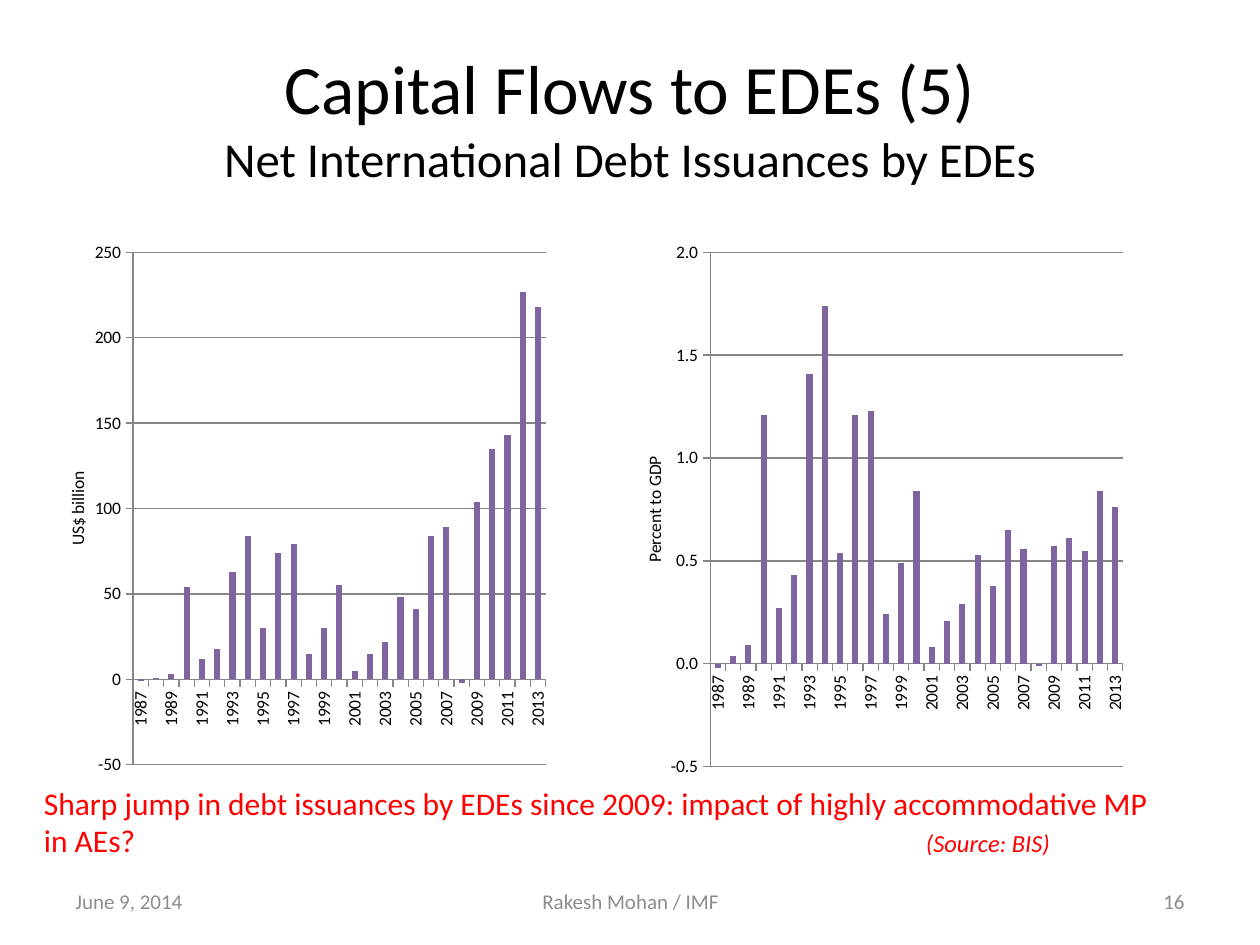
from lxml import etree
from pptx import Presentation
from pptx import util as u
from pptx.chart.data import CategoryChartData
from pptx.dml.color import RGBColor
from pptx.enum import chart as ch
from pptx.enum import text
from pptx.oxml import ns

FONT = "Calibri"
COLORS = {"ink": "000000", "footer": "8C8C8C", "note": "FF0000",
          "bar": "8064A2", "grid": "868686"}
YEARS = [str(year) for year in range(1987, 2014)]
BILLIONS = [-1, 1, 3, 54, 12, 18, 63, 84, 30, 74, 79, 15, 30, 55, 5, 15, 22, 48,
            41, 84, 89, -2, 104, 135, 143, 227, 218]
GDP_SHARES = [-0.02, 0.04, 0.09, 1.21, 0.27, 0.43, 1.41, 1.74, 0.54, 1.21, 1.23,
              0.24, 0.49, 0.84, 0.08, 0.21, 0.29, 0.53, 0.38, 0.65, 0.56, -0.01,
              0.57, 0.61, 0.55, 0.84, 0.76]


def color(name):
    return RGBColor.from_string(COLORS[name])


def style_font(font, size, name="ink"):
    font.name = FONT
    font.size = u.Pt(size)
    font.bold = False
    font.color.rgb = color(name)


def add_span(para, words, size, name="ink", italic=False):
    span = para.add_run()
    span.text = words
    style_font(span.font, size, name)
    span.font.italic = italic


def add_box(page, left, top, width, height, align=text.PP_ALIGN.LEFT,
            anchor=text.MSO_ANCHOR.MIDDLE):
    box = page.shapes.add_textbox(u.Inches(left), u.Inches(top),
                                  u.Inches(width), u.Inches(height))
    frame = box.text_frame
    frame.word_wrap = True
    frame.vertical_anchor = anchor
    para = frame.paragraphs[0]
    para.alignment = align
    return para


def add_tab_stop(para, position):
    props = para._p.get_or_add_pPr()
    stops = etree.SubElement(props, ns.qn("a:tabLst"))
    etree.SubElement(stops, ns.qn("a:tab"), pos=str(u.Inches(position)), algn="l")


def set_plot_area(chart, **fractions):
    area = chart._chartSpace.chart.plotArea
    for old in area.findall(ns.qn("c:layout")):
        area.remove(old)
    layout = etree.Element(ns.qn("c:layout"))
    area.insert(0, layout)
    manual = etree.SubElement(layout, ns.qn("c:manualLayout"))
    settings = {"layoutTarget": "inner", "xMode": "edge", "yMode": "edge", **fractions}
    for tag, value in settings.items():
        etree.SubElement(manual, ns.qn("c:" + tag), val=str(value))


def style_category_axis(axis):
    axis.has_major_gridlines = False
    axis.major_tick_mark = ch.XL_TICK_MARK.OUTSIDE
    axis.tick_label_position = ch.XL_TICK_LABEL_POSITION.NEXT_TO_AXIS
    axis.format.line.color.rgb = color("grid")
    style_font(axis.tick_labels.font, 10)
    axis._element.find(ns.qn("c:txPr")).find(ns.qn("a:bodyPr")).set("rot", "-5400000")
    skip = etree.Element(ns.qn("c:tickLblSkip"), val="2")
    axis._element.find(ns.qn("c:noMultiLvlLbl")).addprevious(skip)


def style_value_axis(axis, title, scale, number_format):
    axis.minimum_scale, axis.maximum_scale, axis.major_unit = scale
    axis.major_tick_mark = ch.XL_TICK_MARK.OUTSIDE
    axis.has_major_gridlines = True
    for line in (axis.format.line, axis.major_gridlines.format.line):
        line.color.rgb = color("grid")
    axis.tick_labels.number_format = number_format
    axis.tick_labels.number_format_is_linked = False
    style_font(axis.tick_labels.font, 10)
    frame = axis.axis_title.text_frame
    add_span(frame.paragraphs[0], title, 10)
    frame._txBody.find(ns.qn("a:bodyPr")).set("rot", "-5400000")


def add_columns(page, left, values, title, scale, number_format, plot_height):
    data = CategoryChartData(number_format=number_format)
    data.categories = YEARS
    data.add_series("Series 1", values)
    chart = page.shapes.add_chart(
        ch.XL_CHART_TYPE.COLUMN_CLUSTERED, u.Inches(left), u.Inches(1.75),
        u.Inches(4.42), u.Inches(4.95), data).chart
    chart.has_legend = False
    chart.has_title = False
    style_font(chart.font, 10)
    plot = chart.plots[0]
    plot.vary_by_categories = False
    plot.gap_width = 150
    series = plot.series[0]
    series.invert_if_negative = False
    series.format.fill.solid()
    series.format.fill.fore_color.rgb = color("bar")
    style_category_axis(chart.category_axis)
    style_value_axis(chart.value_axis, title, scale, number_format)
    set_plot_area(chart, x=0.126, y=0.051, w=0.741, h=plot_height)


def add_title(page):
    para = add_box(page, 0.5, 0.3, 9, 1.25, text.PP_ALIGN.CENTER)
    add_span(para, "Capital Flows to EDEs (5)", 39.6)
    para.add_line_break()
    add_span(para, "Net International Debt Issuances by EDEs", 27.9)


def add_footer(page):
    items = [("June 9, 2014", 0.5, 2.33, text.PP_ALIGN.LEFT),
             ("Rakesh Mohan / IMF", 3.42, 3.17, text.PP_ALIGN.CENTER),
             ("16", 7.17, 2.33, text.PP_ALIGN.RIGHT)]
    for words, left, width, align in items:
        add_span(add_box(page, left, 6.95, width, 0.4, align), words, 12, "footer")


def add_note(page):
    para = add_box(page, 0.25, 6.17, 9.17, 0.71, anchor=text.MSO_ANCHOR.TOP)
    add_tab_stop(para, 7)
    add_span(para, "Sharp jump in debt issuances by EDEs since 2009: impact of "
                   "highly accommodative MP in AEs?\t", 18, "note")
    add_span(para, "(Source: BIS)", 14, "note", italic=True)


def main():
    deck = Presentation()
    deck.slide_width, deck.slide_height = u.Inches(10), u.Inches(7.5)
    page = deck.slides.add_slide(deck.slide_layouts[6])
    add_title(page)
    add_footer(page)
    add_columns(page, 0.5, BILLIONS, "US$ billion", (-50, 250, 50), "0", 0.822)
    add_columns(page, 5.08, GDP_SHARES, "Percent to GDP", (-0.5, 2, 0.5), "0.0", 0.825)
    add_note(page)
    deck.save("out.pptx")


if __name__ == "__main__":
    main()
